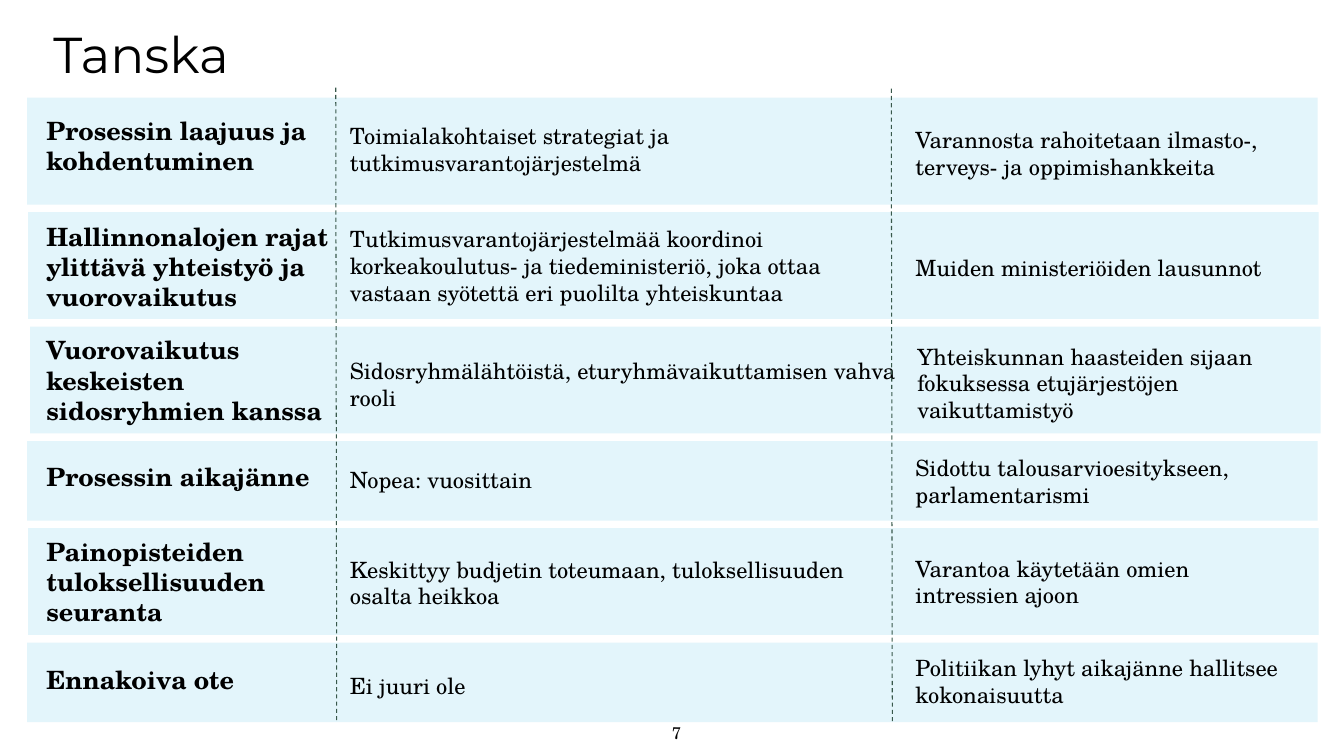
from pptx import Presentation
from pptx.dml.color import RGBColor
from pptx.enum.dml import MSO_LINE
from pptx.enum.shapes import MSO_CONNECTOR, MSO_SHAPE
from pptx.enum.text import MSO_ANCHOR, PP_ALIGN
from pptx.oxml.ns import qn
from pptx.util import Inches, Pt
from lxml import etree

RECTANGLE = MSO_SHAPE.RECTANGLE
STRAIGHT = MSO_CONNECTOR.STRAIGHT
DASH = MSO_LINE.DASH
TOP, MIDDLE = MSO_ANCHOR.TOP, MSO_ANCHOR.MIDDLE
LEFT, CENTER = PP_ALIGN.LEFT, PP_ALIGN.CENTER

TITLE = "Tanska"
PAGE = "7"
TITLE_FONT, BODY_FONT = "Montserrat", "TeX Gyre Schola"
BLACK, BAND_FILL, DIVIDER = "000000", "E3F5FB", "38584B"

# Each row: band height, band left, then (text, width, vertical nudge) per column.
ROWS = [
    (1.06, 0.27, [
        ("Prosessin laajuus ja kohdentuminen", 2.76, -0.06),
        ("Toimialakohtaiset strategiat ja tutkimusvarantojärjestelmä", 5.27, -0.02),
        ("Varannosta rahoitetaan ilmasto-, terveys- ja oppimishankkeita", 3.97, 0.02)]),
    (1.06, 0.28, [
        ("Hallinnonalojen rajat ylittävä yhteistyö ja vuorovaikutus", 3.2, 0.01),
        ("Tutkimusvarantojärjestelmää koordinoi korkeakoulutus- ja tiedeministeriö, "
         "joka ottaa vastaan syötettä eri puolilta yhteiskuntaa", 5.4, 0),
        ("Muiden ministeriöiden lausunnot", 4.16, 0.02)]),
    (1.06, 0.3, [
        ("Vuorovaikutus keskeisten sidosryhmien kanssa", 2.94, 0),
        ("Sidosryhmälähtöistä, eturyhmävaikuttamisen vahva rooli", 5.62, 0.04),
        ("Yhteiskunnan haasteiden sijaan fokuksessa etujärjestöjen vaikuttamistyö",
         3.84, 0.03)]),
    (0.79, 0.27, [
        ("Prosessin aikajänne", 2.96, -0.04),
        ("Nopea: vuosittain", 5.42, -0.01),
        ("Sidottu talousarvioesitykseen, parlamentarismi", 3.67, 0)]),
    (1.06, 0.28, [
        ("Painopisteiden tuloksellisuuden seuranta", 2.36, 0),
        ("Keskittyy budjetin toteumaan, tuloksellisuuden osalta heikkoa", 5.39, 0.01),
        ("Varantoa käytetään omien intressien ajoon", 3.02, 0)]),
    (0.79, 0.27, [
        ("Ennakoiva ote", 2.36, -0.03),
        ("Ei juuri ole", 5.35, 0.03),
        ("Politiikan lyhyt aikajänne hallitsee kokonaisuutta", 3.99, -0.01)]),
]
COLUMN_LEFTS = [0.38, 3.39, 9]
DIVIDERS = [(8.84, 0.88), (3.33, 0.87)]
DIVIDER_LENGTH, DIVIDER_LEAN = 6.3, 0.01
FIRST_TOP, GAP, BAND_WIDTH, CELL_HEIGHT = 0.97, 0.075, 12.8, 1.06

deck = Presentation()
deck.slide_width, deck.slide_height = Inches(13.33), Inches(7.5)
slide = deck.slides.add_slide(deck.slide_layouts[6])


def color(code):
    return RGBColor.from_string(code)


def add_text(text, left, top, width, height, size=16, font=BODY_FONT, bold=False,
             anchor=MIDDLE, align=LEFT, inset=(0.08, 0.04)):
    box = slide.shapes.add_textbox(*map(Inches, (left, top, width, height)))
    frame = box.text_frame
    frame.word_wrap = True
    frame.vertical_anchor = anchor
    frame.margin_left = frame.margin_right = Inches(inset[0])
    frame.margin_top = frame.margin_bottom = Inches(inset[1])
    paragraph = frame.paragraphs[0]
    paragraph.alignment = align
    run = paragraph.add_run()
    run.text = text
    run.font.size, run.font.name, run.font.bold = Pt(size), font, bold
    run.font.color.rgb = color(BLACK)


def add_band(left, top, height):
    band = slide.shapes.add_shape(
        RECTANGLE, *map(Inches, (left, top, BAND_WIDTH, height)))
    band.shadow.inherit = False
    band.fill.solid()
    band.fill.fore_color.rgb = color(BAND_FILL)
    band.line.fill.background()


def add_divider(x, y):
    divider = slide.shapes.add_connector(
        STRAIGHT, *map(Inches, (x, y, x + DIVIDER_LEAN, y + DIVIDER_LENGTH)))
    divider.line.color.rgb = color(DIVIDER)
    divider.line.width = Pt(0.75)
    divider.line.dash_style = DASH
    etree.SubElement(divider._element.spPr, qn("a:effectLst"))


add_text(TITLE, 0.43, 0.18, 11.02, 1.24, size=36, font=TITLE_FONT, anchor=TOP,
         inset=(0.1, 0.05))

row_top = FIRST_TOP
for band_height, band_left, cells in ROWS:
    add_band(band_left, row_top, band_height)
    cell_top = row_top + (band_height - CELL_HEIGHT) / 2
    for column, (text, width, nudge) in enumerate(cells):
        is_label = column == 0
        add_text(text, COLUMN_LEFTS[column] + (0.02 if band_left == 0.3 and column == 2 else 0),
                 cell_top + nudge, width, CELL_HEIGHT,
                 size=18 if is_label else 16, bold=is_label)
    row_top += band_height + GAP

for x, y in DIVIDERS:
    add_divider(x, y)

add_text(PAGE, 5.21, 6.74, 3, CELL_HEIGHT, size=12, align=CENTER, inset=(0.1, 0.05))

deck.save("out.pptx")
